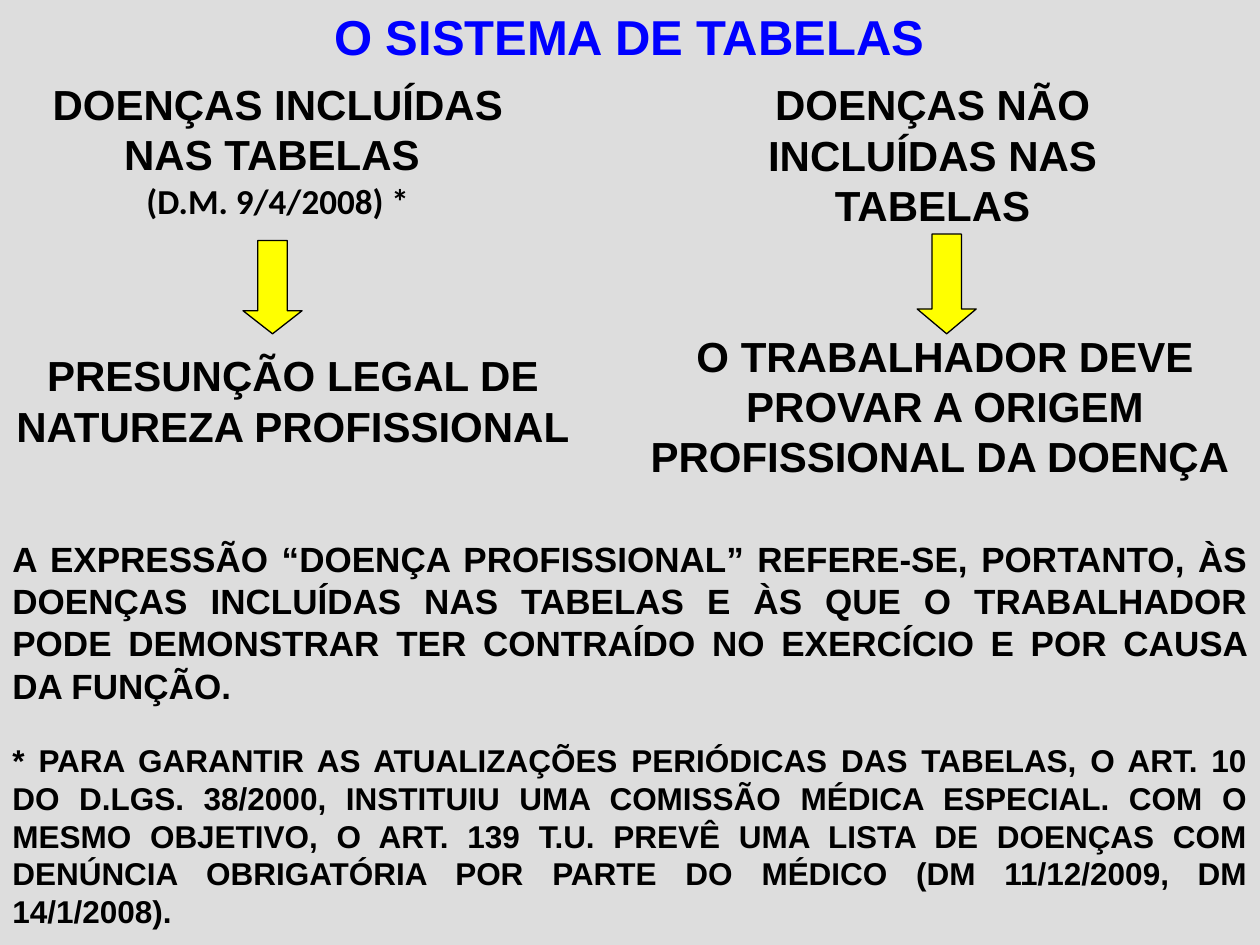
from dataclasses import dataclass

from pptx import Presentation
from pptx.dml.color import RGBColor
from pptx.enum.shapes import MSO_SHAPE
from pptx.enum.text import MSO_ANCHOR, PP_ALIGN
from pptx.slide import Slide
from pptx.util import Cm, Pt

DOWN = MSO_SHAPE.DOWN_ARROW
TOP, MIDDLE = MSO_ANCHOR.TOP, MSO_ANCHOR.MIDDLE
CENTER, JUSTIFY = PP_ALIGN.CENTER, PP_ALIGN.JUSTIFY

GREY = RGBColor(0xDD, 0xDD, 0xDD)
BLACK = RGBColor(0, 0, 0)
BLUE = RGBColor(0, 0, 0xFF)
YELLOW = RGBColor(0xFF, 0xFF, 0)


@dataclass
class Line:
    text: str
    size: int = 24
    font: str = "Arial"
    color: RGBColor = BLACK
    before: int = 0


@dataclass
class Block:
    left: float
    top: float
    width: float
    height: float
    lines: list[Line]
    align: PP_ALIGN = CENTER
    anchor: MSO_ANCHOR = TOP


@dataclass
class Arrow:
    left: float
    top: float
    height: float
    head: float
    width: float = 1.19


BLOCKS = [
    Block(0.1, 1.93, 11, 2.18, [
        Line("DOENÇAS INCLUÍDAS NAS TABELAS "),
        Line("(D.M. 9/4/2008) *", 20, "Calibri"),
    ], anchor=MIDDLE),
    Block(14.1, 1.52, 9.4, 3.18, [
        Line("DOENÇAS NÃO INCLUÍDAS NAS TABELAS"),
    ], anchor=MIDDLE),
    Block(-0.1, 6.93, 12.01, 2.29, [
        Line("PRESUNÇÃO LEGAL DE NATUREZA PROFISSIONAL"),
    ]),
    Block(12.6, 6.53, 12.9, 3.3, [
        Line("O TRABALHADOR DEVE PROVAR A ORIGEM "
             "PROFISSIONAL DA DOENÇA "),
    ]),
    Block(0, 10.72, 25.4, 7.98, [
        Line("A EXPRESSÃO “DOENÇA PROFISSIONAL” REFERE-SE, PORTANTO, ÀS "
             "DOENÇAS INCLUÍDAS NAS TABELAS E ÀS QUE O TRABALHADOR PODE "
             "DEMONSTRAR TER CONTRAÍDO NO EXERCÍCIO E POR CAUSA DA FUNÇÃO. ",
             20),
        Line("* PARA GARANTIR AS ATUALIZAÇÕES PERIÓDICAS DAS TABELAS, O "
             "ART. 10 DO D.LGS. 38/2000, INSTITUIU UMA COMISSÃO MÉDICA "
             "ESPECIAL. COM O MESMO OBJETIVO, O ART. 139 T.U. PREVÊ UMA "
             "LISTA DE DOENÇAS COM DENÚNCIA OBRIGATÓRIA POR PARTE DO MÉDICO "
             "(DM 11/12/2009, DM 14/1/2008).", 18, before=20),
    ], JUSTIFY),
    Block(4.29, 0, 16.79, 2.62, [
        Line("O SISTEMA DE TABELAS", 28, color=BLUE),
    ]),
]

ARROWS = [
    Arrow(4.9, 4.85, 1.88, 0.39),
    Arrow(18.49, 4.72, 2.01, 0.42),
]


def draw_block(slide: Slide, block: Block) -> None:
    box = slide.shapes.add_textbox(
        Cm(block.left), Cm(block.top), Cm(block.width), Cm(block.height))
    frame = box.text_frame
    frame.word_wrap = True
    frame.vertical_anchor = block.anchor
    frame.text = "\n".join(line.text for line in block.lines)
    for para, line in zip(frame.paragraphs, block.lines):
        para.alignment = block.align
        para.space_before = Pt(line.before)
        for run in para.runs:
            run.font.name = line.font
            run.font.size = Pt(line.size)
            run.font.bold = True
            run.font.color.rgb = line.color


def draw_arrow(slide: Slide, arrow: Arrow) -> None:
    shape = slide.shapes.add_shape(
        DOWN, Cm(arrow.left), Cm(arrow.top),
        Cm(arrow.width), Cm(arrow.height))
    shape.shadow.inherit = False
    shape.adjustments[0] = 0.5
    shape.adjustments[1] = 2 * arrow.head * arrow.height / arrow.width / 2
    shape.adjustments[1] = arrow.head
    shape.fill.solid()
    shape.fill.fore_color.rgb = YELLOW
    shape.line.color.rgb = BLACK
    shape.line.width = Pt(0.75)


def main() -> None:
    deck = Presentation()
    deck.slide_width, deck.slide_height = Cm(25.4), Cm(19.05)
    slide = deck.slides.add_slide(deck.slide_layouts[6])
    slide.background.fill.solid()
    slide.background.fill.fore_color.rgb = GREY
    for arrow in ARROWS:
        draw_arrow(slide, arrow)
    for block in BLOCKS:
        draw_block(slide, block)
    deck.save("out.pptx")


if __name__ == "__main__":
    main()
